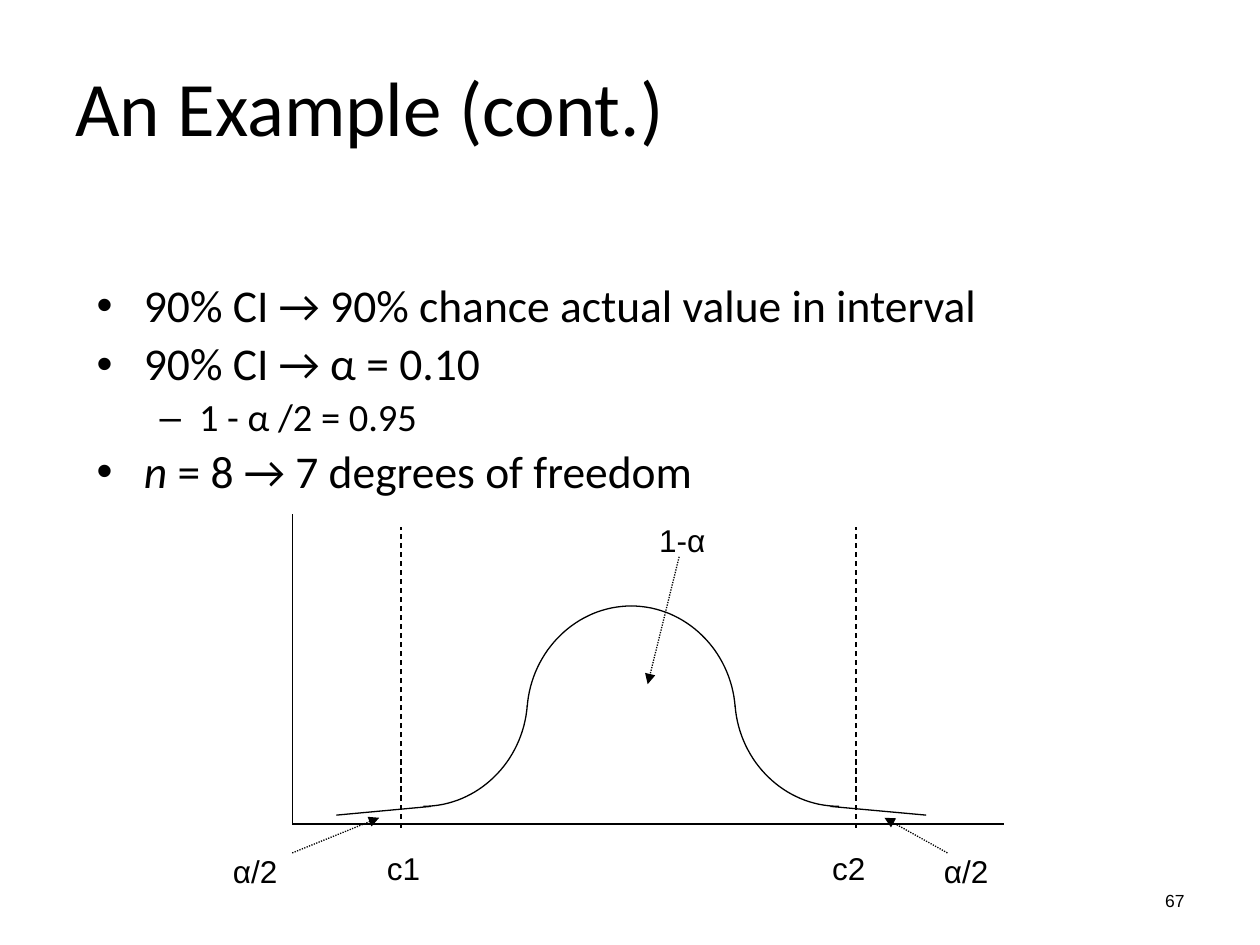
from lxml import etree
from pptx import Presentation
from pptx.dml.color import RGBColor
from pptx.enum import dml, text
from pptx.enum.shapes import MSO_CONNECTOR
from pptx.oxml.ns import qn
from pptx.util import Pt

BLACK = RGBColor(0, 0, 0)
WHITE = RGBColor(255, 255, 255)
LINE_WIDTH = 0.75
DASH = dml.MSO_LINE.DASH
DOT = dml.MSO_LINE.ROUND_DOT

# Content; boxes are left, top, width, height in points
TITLE = ("An Example (cont.)", (36, 9.4, 594, 102.2))
PAGE = ("67", (516.2, 500.4, 167.8, 28.8))
BODY_BOX = (48.2, 158.4, 612, 151.9)
BODY = [  # level, runs of (text, italic)
    (0, [("90% CI → 90% chance actual value in interval", False)]),
    (0, [("90% CI → α = 0.10", False)]),
    (1, [("1 - α /2 = 0.95", False)]),
    (0, [("n", True), (" = 8 → 7 degrees of freedom", False)]),
]
LEVELS = [  # size, left margin, hanging indent, bullet
    (26, 27, -27, "•"),
    (22, 58.5, -22.5, "–"),
]
LABELS = [  # text, box, wrap
    ("c1", (214, 481.7, 35, 28.8), False),
    ("c2", (468.4, 481.7, 35, 28.8), False),
    ("1-α", (369.6, 294.2, 42, 28.8), False),
    ("α/2", (126, 483.5, 58.3, 28.8), True),
    ("α/2", (532.3, 483.5, 40, 28.8), False),
]
LINES = [  # start, end, dash, arrow
    ((246.2, 460.8), (192.2, 465.8), None, False),  # left tail
    ((474.5, 460.8), (529.2, 465.8), None, False),  # right tail
    ((167, 470.9), (573.8, 470.9), None, False),  # x axis
    ((167, 470.9), (167, 293.8), None, False),  # y axis
    ((229.2, 473), (229.2, 301), DASH, False),  # c1
    ((489.1, 473), (489.1, 301), DASH, False),  # c2
    ((167, 487.4), (216.7, 467.3), DOT, True),
    ((541.4, 487.4), (505.4, 467.3), DOT, True),
    ((388.1, 318.2), (370.1, 391), DOT, True),
]
# The bell is one quarter curve, mirrored four ways
QUARTER = [(0, 0), (31, 0), (57, 25.4), (59.4, 57.6)]
QUARTERS = [  # start, x direction, y direction
    ((360.7, 346.3), 1, 1),
    ((479.5, 460.8), -1, -1),
    ((360.7, 346.3), -1, 1),
    ((241.9, 460.8), 1, -1),
]
STEPS = 32


def add_run(p, words, size, font, italic=False):
    r = p.add_run()
    r.text = words
    r.font.size, r.font.name = Pt(size), font
    r.font.italic = italic
    r.font.color.rgb = BLACK


def add_box(s, box, anchor=text.MSO_ANCHOR.TOP, wrap=True):
    tf = s.shapes.add_textbox(*map(Pt, box)).text_frame
    tf.word_wrap = wrap
    tf.vertical_anchor = anchor
    return tf


def style_line(line, dash=None):
    line.color.rgb = BLACK
    line.width = Pt(LINE_WIDTH)
    if dash is not None:
        line.dash_style = dash


def add_line(s, start, end, dash, arrow):
    c = s.shapes.add_connector(MSO_CONNECTOR.STRAIGHT, *map(Pt, start + end))
    style_line(c.line, dash)
    if arrow:
        etree.SubElement(c.line._get_or_add_ln(), qn("a:tailEnd"), type="triangle")
    etree.SubElement(c._element.spPr, qn("a:effectLst"))


def curve_point(t):
    weights = ((1 - t) ** 3, 3 * t * (1 - t) ** 2, 3 * t * t * (1 - t), t ** 3)
    return [sum(w * pt[axis] for w, pt in zip(weights, QUARTER)) for axis in (0, 1)]


def add_quarter(s, start, dx, dy):
    x0, y0 = start
    offsets = [curve_point(i / STEPS) for i in range(1, STEPS + 1)]
    builder = s.shapes.build_freeform(Pt(x0), Pt(y0))
    builder.add_line_segments(
        [(Pt(x0 + dx * x), Pt(y0 + dy * y)) for x, y in offsets], close=False)
    sp = builder.convert_to_shape()
    sp.shadow.inherit = False
    sp.fill.background()
    style_line(sp.line)


def add_body(s):
    tf = add_box(s, BODY_BOX)
    for i, (level, runs) in enumerate(BODY):
        size, margin, indent, bullet = LEVELS[level]
        p = tf.add_paragraph() if i else tf.paragraphs[0]
        p.level = level
        p.line_spacing = 0.9
        p.space_before = Pt(0.2 * size)
        pPr = p._p.get_or_add_pPr()
        pPr.set("marL", str(Pt(margin)))
        pPr.set("indent", str(Pt(indent)))
        etree.SubElement(pPr, qn("a:buFont"), typeface="Arial")
        etree.SubElement(pPr, qn("a:buChar"), char=bullet)
        for words, italic in runs:
            add_run(p, words, size, "Calibri", italic)


def main():
    prs = Presentation()
    prs.slide_width, prs.slide_height = Pt(720), Pt(540)
    s = prs.slides.add_slide(prs.slide_layouts[6])
    s.background.fill.solid()
    s.background.fill.fore_color.rgb = WHITE

    # Page number, title and bullets
    words, box = PAGE
    p = add_box(s, box, text.MSO_ANCHOR.MIDDLE).paragraphs[0]
    p.alignment = text.PP_ALIGN.RIGHT
    add_run(p, words, 10, "Arial")
    words, box = TITLE
    add_run(add_box(s, box, text.MSO_ANCHOR.MIDDLE).paragraphs[0], words, 44, "Calibri")
    add_body(s)

    # Bell curve diagram
    for quarter in QUARTERS:
        add_quarter(s, *quarter)
    for line in LINES:
        add_line(s, *line)
    for words, box, wrap in LABELS:
        tf = add_box(s, box, wrap=wrap)
        tf.auto_size = text.MSO_AUTO_SIZE.SHAPE_TO_FIT_TEXT
        add_run(tf.paragraphs[0], words, 18, "Arial")

    prs.save("out.pptx")


if __name__ == "__main__":
    main()
